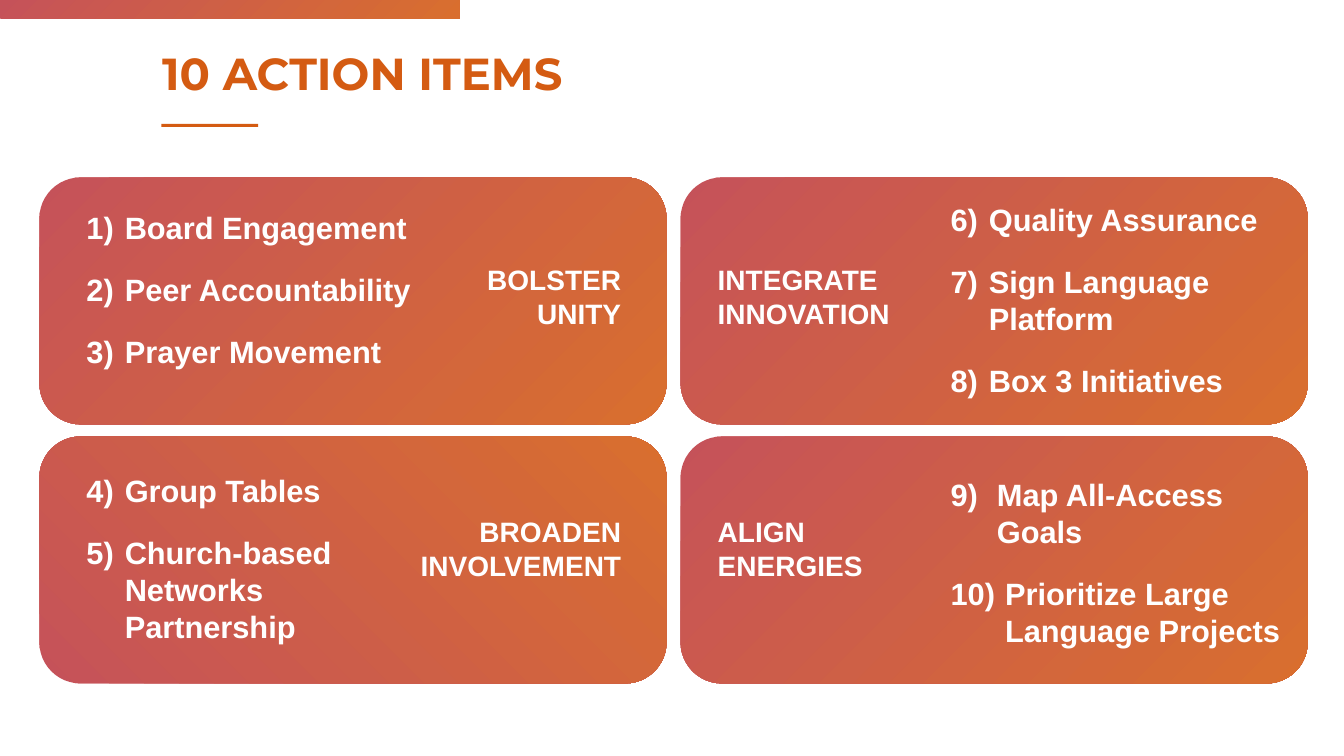
import pptx
import pptx.util
import pptx.dml.color
import pptx.enum.shapes
import pptx.enum.text
import pptx.oxml
import pptx.oxml.ns
from dataclasses import dataclass

Inches = pptx.util.Inches
SHAPE = pptx.enum.shapes.MSO_SHAPE
ALIGN = pptx.enum.text.PP_ALIGN


@dataclass(frozen=True)
class Theme:
    orange: str = "D45B12"
    rose: str = "BE3B43"
    white: str = "FFFFFF"
    opacity: int = 88
    heading_font: str = "Montserrat"
    body_font: str = "Arial"
    title_size: int = 32
    item_size: int = 22
    label_size: int = 20


def add_text(p, text, *, size, font, color, bold=True):
    """Fill a paragraph, turning each newline into a line break."""
    for i, line in enumerate(text.split("\n")):
        if i:
            p.add_line_break()
        r = p.add_run()
        r.text = line
        r.font.size = pptx.util.Pt(size)
        r.font.name = font
        r.font.bold = bold
        r.font.color.rgb = pptx.dml.color.RGBColor.from_string(color)


class SlideBuilder:
    def __init__(self, slide, theme):
        self.s = slide
        self.theme = theme

    def shape(self, kind, x, y, w, h):
        sp = self.s.shapes.add_shape(kind, Inches(x), Inches(y), Inches(w), Inches(h))
        sp.shadow.inherit = False
        sp.line.fill.background()
        return sp

    def solid(self, x, y, w, h):
        sp = self.shape(SHAPE.RECTANGLE, x, y, w, h)
        sp.fill.solid()
        sp.fill.fore_color.rgb = pptx.dml.color.RGBColor.from_string(self.theme.orange)

    def gradient(self, kind, x, y, w, h, focus="bottom"):
        """Radial gradient, orange at the right top or right bottom corner."""
        sp = self.shape(kind, x, y, w, h)
        top, bottom = (100000, 0) if focus == "bottom" else (0, 100000)
        stops = "".join(
            f'<a:gs pos="{pos}"><a:srgbClr val="{color}">'
            f'<a:alpha val="{self.theme.opacity * 1000}"/></a:srgbClr></a:gs>'
            for pos, color in ((0, self.theme.orange), (100000, self.theme.rose)))
        fill = pptx.oxml.parse_xml(
            f'<a:gradFill {pptx.oxml.ns.nsdecls("a")} rotWithShape="1">'
            f'<a:gsLst>{stops}</a:gsLst><a:path path="circle">'
            f'<a:fillToRect l="100000" t="{top}" r="0" b="{bottom}"/>'
            '</a:path></a:gradFill>')
        sp.element.spPr.find(pptx.oxml.ns.qn("a:prstGeom")).addnext(fill)

    def text_box(self, x, y, w, h):
        sp = self.s.shapes.add_textbox(Inches(x), Inches(y), Inches(w), Inches(h))
        tf = sp.text_frame
        tf.word_wrap = True
        return tf

    def title(self, text, x, y, w, h):
        p = self.text_box(x, y, w, h).paragraphs[0]
        p.line_spacing = 0.9
        add_text(p, text, size=self.theme.title_size,
                 font=self.theme.heading_font, color=self.theme.orange)

    def label(self, text, x, y, w, h, align):
        p = self.text_box(x, y, w, h).paragraphs[0]
        p.alignment = align
        add_text(p, text, size=self.theme.label_size,
                 font=self.theme.body_font, color=self.theme.white)

    def numbered_list(self, items, first, indents, x, y, w, h):
        tf = self.text_box(x, y, w, h)
        for i, (item, indent) in enumerate(zip(items, indents)):
            p = tf.add_paragraph() if i else tf.paragraphs[0]
            p.space_after = pptx.util.Pt(18)
            pPr = p._p.get_or_add_pPr()
            pPr.set("marL", str(Inches(indent)))
            pPr.set("indent", str(-Inches(indent)))
            pPr.append(pptx.oxml.parse_xml(
                f'<a:buClr {pptx.oxml.ns.nsdecls("a")}>'
                f'<a:srgbClr val="{self.theme.white}"/></a:buClr>'))
            pPr.append(pptx.oxml.parse_xml(
                f'<a:buFont {pptx.oxml.ns.nsdecls("a")} typeface="+mj-lt"/>'))
            pPr.append(pptx.oxml.parse_xml(
                f'<a:buAutoNum {pptx.oxml.ns.nsdecls("a")} '
                f'type="arabicParenR" startAt="{first + i}"/>'))
            add_text(p, item, size=self.theme.item_size,
                     font=self.theme.body_font, color=self.theme.white)


# Card grid and the columns of text inside it
CARD_W, CARD_H = 6.22, 2.45
CARD_X, CARD_Y = (0.39, 6.75), (1.76, 4.33)
LIST_X, LIST_W = (0.76, 9.33), (3.64, 3.73)
LABEL_X, LABEL_W = (3.98, 7.02), 2.28
LABEL_Y = (2.56, 5.06)
LABEL_ALIGN = (ALIGN.RIGHT, ALIGN.LEFT)
INDENT = 0.38

# Column, row, label, first number, list top, items, indents, gradient focus
CARDS = [
    (0, 0, "BOLSTER\nUNITY", 1, 2.02,
     ["Board Engagement", "Peer Accountability", "Prayer Movement"],
     [INDENT] * 3, "bottom"),
    (0, 1, "BROADEN\nINVOLVEMENT", 4, 4.63,
     ["Group Tables", "Church-based\nNetworks\nPartnership"],
     [INDENT] * 2, "top"),
    (1, 0, "INTEGRATE\nINNOVATION", 6, 1.94,
     ["Quality Assurance", "Sign Language\nPlatform", "Box 3 Initiatives"],
     [INDENT] * 3, "bottom"),
    (1, 1, "ALIGN\nENERGIES", 9, 4.67,
     ["Map All-Access\nGoals", "Prioritize Large\nLanguage Projects"],
     [0.46, 0.54], "bottom"),
]


def main():
    prs = pptx.Presentation()
    prs.slide_width, prs.slide_height = Inches(13.33), Inches(7.5)
    s = prs.slides.add_slide(prs.slide_layouts[6])
    builder = SlideBuilder(s, Theme())

    # Header
    builder.gradient(SHAPE.RECTANGLE, 0, -0.01, 4.56, 0.19)
    builder.solid(1.6, 1.23, 0.96, 0.03)
    builder.title("10 ACTION ITEMS", 1.51, 0.46, 7.41, 0.72)

    # Cards
    for col, row, label, first, top, items, indents, focus in CARDS:
        builder.gradient(SHAPE.ROUNDED_RECTANGLE, CARD_X[col], CARD_Y[row],
                         CARD_W, CARD_H, focus)
        builder.numbered_list(items, first, indents,
                              LIST_X[col], top, LIST_W[col], 2.09)
        builder.label(label, LABEL_X[col], LABEL_Y[row], LABEL_W, 0.77,
                      LABEL_ALIGN[col])

    prs.save("out.pptx")


if __name__ == "__main__":
    main()
